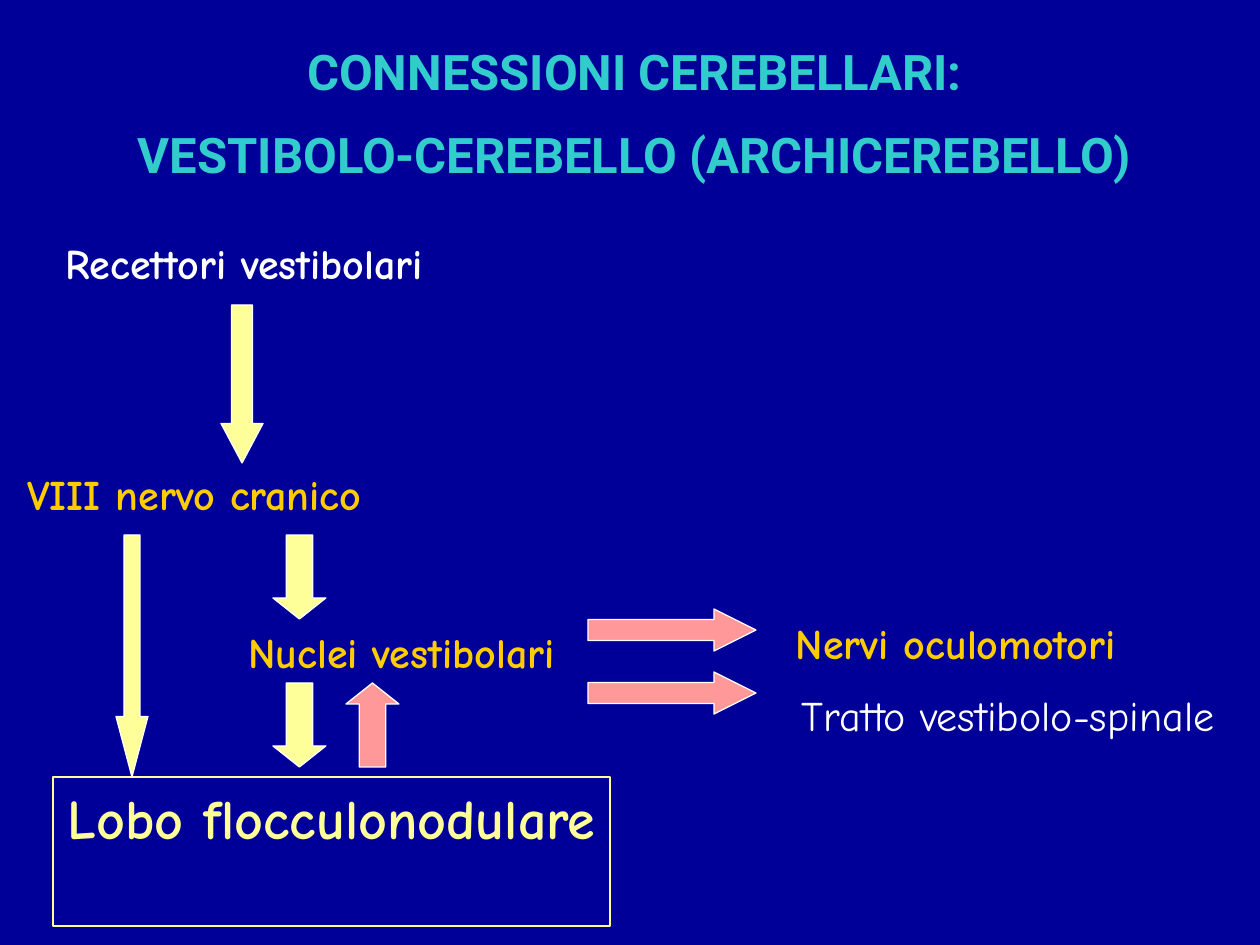
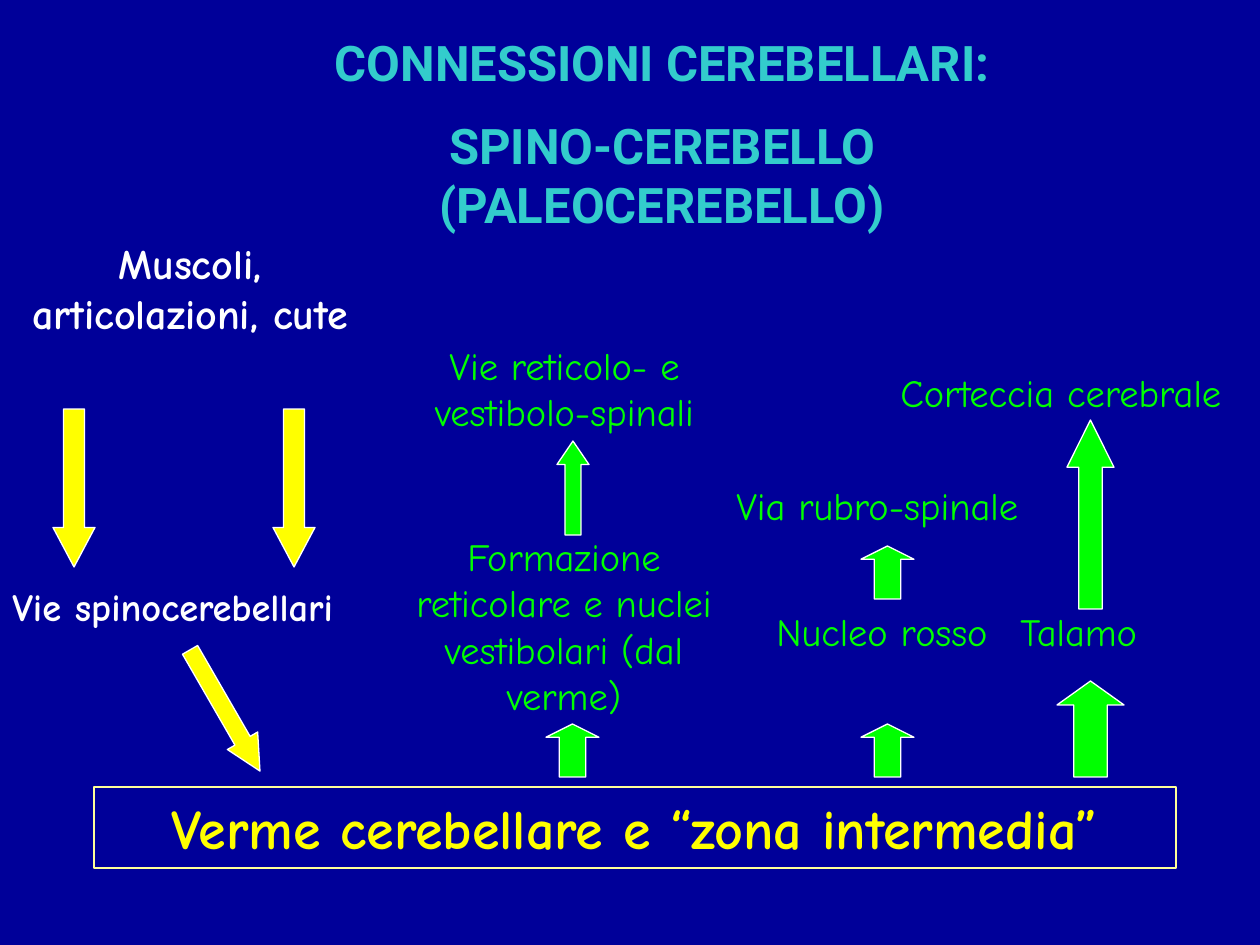
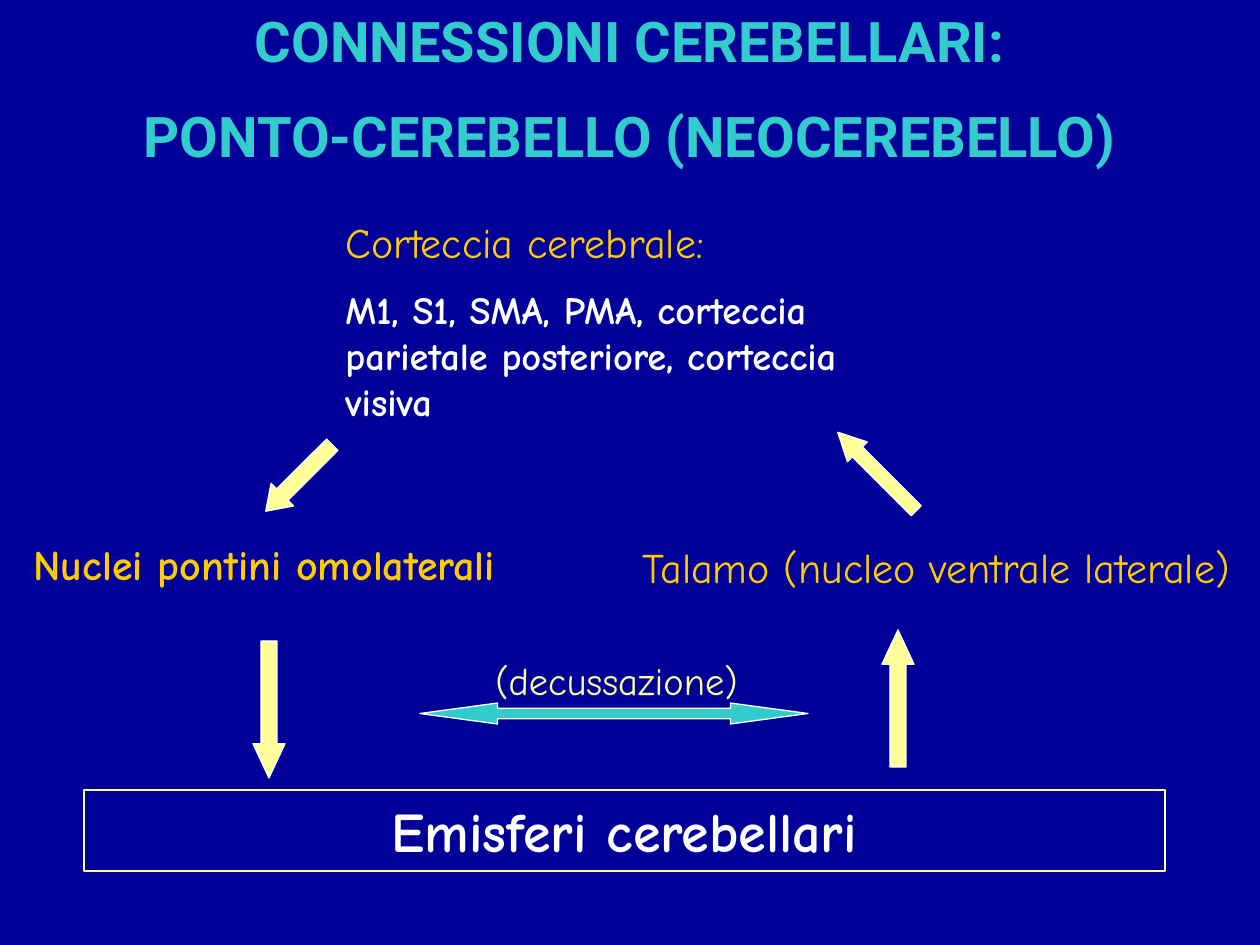
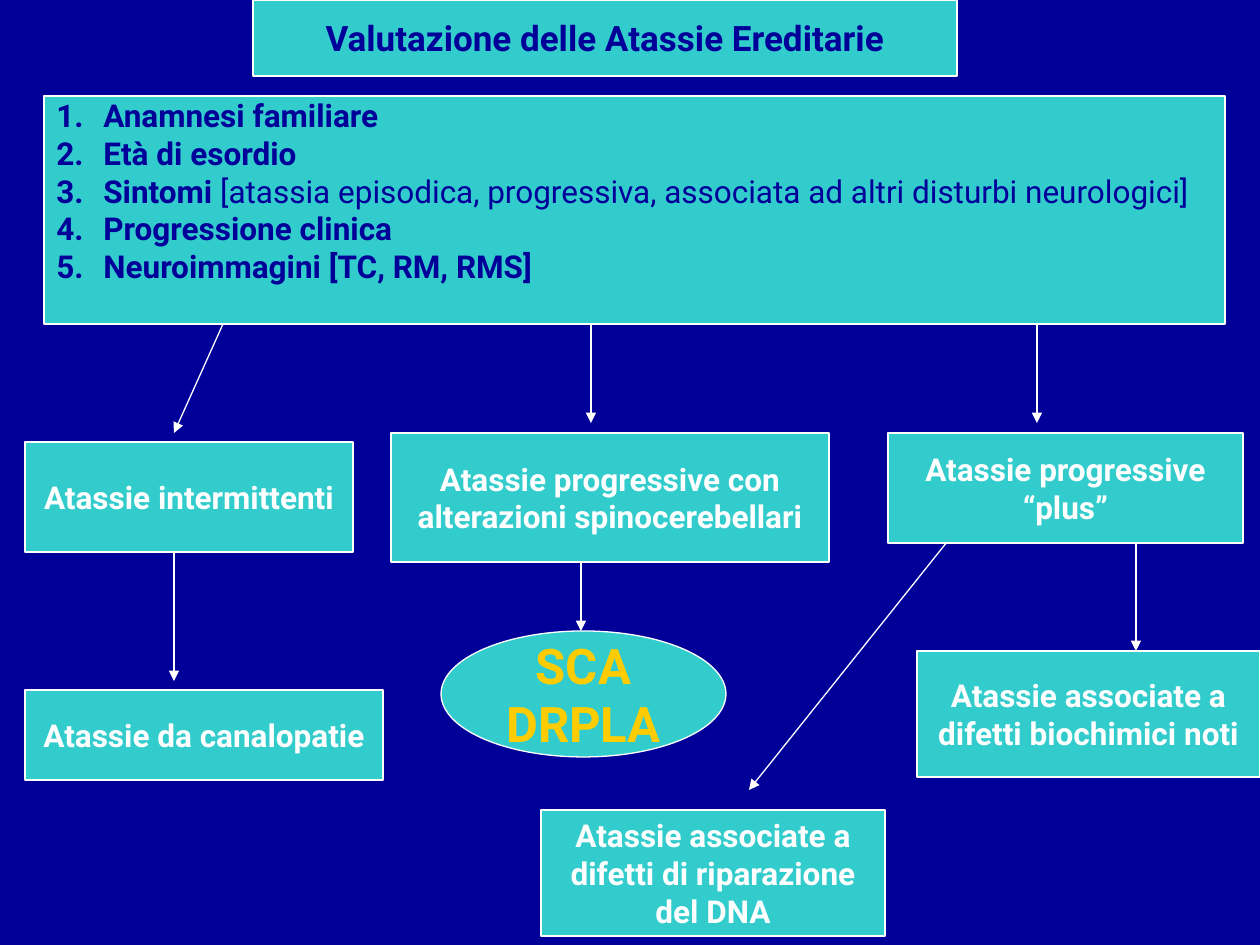
from lxml import etree
from pptx import Presentation
from pptx.dml.color import RGBColor
from pptx.enum.shapes import MSO_CONNECTOR, MSO_SHAPE
from pptx.enum.text import MSO_ANCHOR, PP_ALIGN
from pptx.oxml.ns import qn
from pptx.util import Emu, Pt

EMU_PER_PX = 914400 / 126
LEFT, CENTER, RIGHT = PP_ALIGN.LEFT, PP_ALIGN.CENTER, PP_ALIGN.RIGHT
TOP, MIDDLE = MSO_ANCHOR.TOP, MSO_ANCHOR.MIDDLE
RECT, OVAL = MSO_SHAPE.RECTANGLE, MSO_SHAPE.OVAL
STRAIGHT = MSO_CONNECTOR.STRAIGHT
UP, DOWN, ACROSS, BOTH = (MSO_SHAPE.UP_ARROW, MSO_SHAPE.DOWN_ARROW,
                          MSO_SHAPE.RIGHT_ARROW, MSO_SHAPE.LEFT_RIGHT_ARROW)
COLORS = {"navy": "000099", "teal": "33CCCC", "white": "FFFFFF", "cream": "FFFF99",
          "gold": "FFCC00", "yellow": "FFFF00", "green": "00FF00", "pink": "FF9999"}
HEAD_FONT, BODY_FONT = "Roboto", "Comic Neue"
TITLE = "CONNESSIONI CEREBELLARI:"

# Pathway slides
# title: box, size, second line
# labels: box, alignment, paragraphs of (text, size, colour, bold)
# target: framed label at the foot, as box, text, colour
# arrows: shape, box, colour, rotation
PATHWAYS = [
    {"title": ((34, 35, 1201, 160), 28, "VESTIBOLO-CEREBELLO (ARCHICEREBELLO)"),
     "labels": [
         ((53, 231, 903, 63), LEFT, [("Recettori vestibolari", 24, "white", True)]),
         ((113, 620, 454, 63), RIGHT, [("Nuclei vestibolari", 24, "gold", True)]),
         ((15, 462, 449, 63), LEFT, [("VIII nervo cranico", 24, "gold", True)]),
         ((756, 611, 399, 63), CENTER, [("Nervi oculomotori", 24, "gold", True)]),
         ((756, 683, 504, 63), CENTER, [("Tratto vestibolo-spinale", 24, "white", False)])],
     "target": ((53, 777, 557, 149), "Lobo flocculonodulare", "cream"),
     "arrows": [
         (ACROSS, (163, 363, 158, 42), "cream", 90),
         (DOWN, (116, 535, 32, 242), "cream", 0),
         (DOWN, (273, 535, 53, 84), "cream", 0),
         (DOWN, (273, 683, 53, 84), "cream", 0),
         (UP, (346, 683, 53, 84), "pink", 0),
         (UP, (651, 546, 42, 168), "pink", 90),
         (UP, (651, 609, 42, 168), "pink", 90)]},
    {"title": ((242, 26, 840, 219), 28, "SPINO-CEREBELLO (PALEOCEREBELLO)"),
     "labels": [
         ((0, 577, 388, 59), LEFT, [("Vie spinocerebellari", 22, "white", True)]),
         ((372, 527, 384, 198), CENTER,
          [("Formazione reticolare e nuclei vestibolari (dal verme)", 22, "green", False)]),
         ((888, 363, 388, 59), LEFT, [("Corteccia cerebrale", 22, "green", False)]),
         ((18, 231, 344, 164), CENTER, [("Muscoli, articolazioni, cute", 24, "white", True)]),
         ((756, 602, 252, 105), CENTER, [("Nucleo rosso", 22, "green", False)]),
         ((1008, 602, 158, 59), LEFT, [("Talamo", 22, "green", False)]),
         ((724, 476, 382, 59), LEFT, [("Via rubro-spinale", 22, "green", False)]),
         ((407, 336, 315, 105), CENTER,
          [("Vie reticolo- e vestibolo-spinali", 22, "green", False)])],
     "target": ((94, 787, 1082, 81), "Verme cerebellare e “zona intermedia”", "yellow"),
     "arrows": [
         (ACROSS, (-5, 467, 158, 42), "yellow", 90),
         (ACROSS, (215, 467, 158, 42), "yellow", 90),
         (ACROSS, (155, 693, 140, 35), "yellow", 60),
         (UP, (546, 724, 53, 53), "green", 0),
         (UP, (861, 724, 53, 53), "green", 0),
         (UP, (1057, 681, 67, 96), "green", 0),
         (UP, (861, 546, 53, 53), "green", 0),
         (UP, (1067, 420, 47, 189), "green", 0),
         (UP, (557, 441, 32, 94), "green", 0)]},
    {"title": ((0, 0, 1260, 180), 32, "PONTO-CEREBELLO (NEOCEREBELLO)"),
     "labels": [
         ((333, 210, 535, 224), LEFT,
          [("Corteccia cerebrale:", 24, "gold", False),
           ("M1, S1, SMA, PMA, corteccia parietale posteriore, corteccia visiva",
            22, "white", True)]),
         ((21, 532, 525, 113), LEFT, [("Nuclei pontini omolaterali", 24, "gold", True)]),
         ((483, 651, 325, 59), LEFT, [("(decussazione)", 22, "cream", False)]),
         ((630, 535, 630, 113), LEFT,
          [("Talamo (nucleo ventrale laterale)", 24, "gold", False)])],
     "target": ((84, 790, 1081, 81), "Emisferi cerebellari", "white"),
     "arrows": [
         (DOWN, (253, 641, 32, 137), "cream", 0),
         (DOWN, (283, 431, 32, 94), "cream", 45),
         (UP, (882, 630, 32, 137), "cream", 0),
         (UP, (863, 416, 28, 111), "cream", 315),
         (BOTH, (420, 703, 388, 21), "teal", 0)]},
]

# Flow chart slide: shape, box, lines, size, colour
NODES = [
    (RECT, (253, 0, 704, 76), ["Valutazione delle Atassie Ereditarie"], 20, "navy"),
    (RECT, (25, 442, 328, 110), ["Atassie intermittenti"], 18, "white"),
    (RECT, (25, 690, 358, 90), ["Atassie da canalopatie"], 18, "white"),
    (RECT, (391, 433, 438, 129),
     ["Atassie progressive con", "alterazioni spinocerebellari"], 18, "white"),
    (OVAL, (441, 631, 285, 126), ["SCA", "DRPLA"], 28, "gold"),
    (RECT, (888, 433, 355, 110), ["Atassie progressive", "“plus”"], 18, "white"),
    (RECT, (541, 810, 344, 126),
     ["Atassie associate a", "difetti di riparazione", "del DNA"], 18, "white"),
    (RECT, (917, 651, 343, 126),
     ["Atassie associate a", "difetti biochimici noti"], 18, "white"),
]
CRITERIA_BOX = (44, 96, 1181, 228)
CRITERIA = [("Anamnesi familiare", ""), ("Età di esordio", ""),
            ("Sintomi ",
             "[atassia episodica, progressiva, associata ad altri disturbi neurologici]"),
            ("Progressione clinica", ""), ("Neuroimmagini [TC, RM, RMS]", "")]
NUMBER_INDENT = 47
LINKS = [(223, 324, 174, 433), (174, 552, 174, 681), (591, 324, 591, 423),
         (581, 562, 581, 631), (1037, 324, 1037, 423), (947, 542, 749, 790),
         (1136, 542, 1136, 651)]


def px(n):
    return Emu(round(n * EMU_PER_PX))


def rgb(name):
    return RGBColor.from_string(COLORS[name])


def style_run(r, font, size, color, bold):
    r.font.name, r.font.size, r.font.bold = font, Pt(size), bold
    r.font.color.rgb = rgb(color)


def write(shape, paragraphs, font, align, gap=0.0, anchor=TOP):
    """Fill a shape; gap is the space between paragraphs, in text heights."""
    tf = shape.text_frame
    tf.word_wrap, tf.vertical_anchor = True, anchor
    tf.text = "\n".join(text for text, *_ in paragraphs)
    for i, (p, (_, size, color, bold)) in enumerate(zip(tf.paragraphs, paragraphs)):
        p.alignment = align
        if i and gap:
            p.space_before = Pt(size * gap)
        style_run(p.runs[0], font, size, color, bold)


def add_label(s, box, paragraphs, font, align):
    write(s.shapes.add_textbox(*map(px, box)), paragraphs, font, align, gap=0.5)


def add_figure(s, kind, box, fill=None, line="white"):
    sp = s.shapes.add_shape(kind, *map(px, box))
    sp.shadow.inherit = False
    if fill:
        sp.fill.solid()
        sp.fill.fore_color.rgb = rgb(fill)
    else:
        sp.fill.background()
    sp.line.color.rgb = rgb(line)
    sp.line.width = Pt(0.75)
    return sp


def add_arrow(s, kind, box, color, rotation):
    sp = add_figure(s, kind, box, color)
    sp.rotation = rotation
    # A head takes a quarter of the length, or a fifth when there are two
    length, breadth = max(box[2:]), min(box[2:])
    sp.adjustments[1] = length / breadth / (5 if kind == BOTH else 4)


def add_link(s, ends):
    c = s.shapes.add_connector(STRAIGHT, *map(px, ends))
    c.line.color.rgb = rgb("white")
    c.line.width = Pt(0.75)
    etree.SubElement(c.line._get_or_add_ln(), qn("a:tailEnd"), type="triangle")
    etree.SubElement(c._element.spPr, qn("a:effectLst"))


def add_criteria(s):
    tf = add_figure(s, RECT, CRITERIA_BOX, "teal").text_frame
    tf.word_wrap, tf.vertical_anchor, tf.margin_top = True, TOP, 0
    for i, (name, detail) in enumerate(CRITERIA):
        p = tf.add_paragraph() if i else tf.paragraphs[0]
        p.alignment = LEFT
        pPr = p._p.get_or_add_pPr()
        pPr.set("marL", str(px(NUMBER_INDENT)))
        pPr.set("indent", str(-px(NUMBER_INDENT)))
        etree.SubElement(pPr, qn("a:buFont"), typeface=HEAD_FONT)
        etree.SubElement(pPr, qn("a:buAutoNum"), type="arabicPeriod")
        for text, bold in ((name, True), (detail, False)):
            if text:
                r = p.add_run()
                r.text = text
                style_run(r, HEAD_FONT, 18, "navy", bold)


def add_pathway(s, pathway):
    box, size, subject = pathway["title"]
    add_label(s, box, [(text, size, "teal", True) for text in (TITLE, subject)],
              HEAD_FONT, CENTER)
    for box, align, paragraphs in pathway["labels"]:
        add_label(s, box, paragraphs, BODY_FONT, align)
    box, text, color = pathway["target"]
    write(add_figure(s, RECT, box, line="cream"), [(text, 32, color, True)],
          BODY_FONT, CENTER)
    for arrow in pathway["arrows"]:
        add_arrow(s, *arrow)


def add_flow_chart(s):
    add_criteria(s)
    for kind, box, lines, size, color in NODES:
        write(add_figure(s, kind, box, "teal"),
              [(text, size, color, True) for text in lines],
              HEAD_FONT, CENTER, anchor=MIDDLE)
    for ends in LINKS:
        add_link(s, ends)


def main():
    prs = Presentation()
    prs.slide_width, prs.slide_height = px(1260), px(945)
    background = prs.slide_master.background.fill
    background.solid()
    background.fore_color.rgb = rgb("navy")
    blank = prs.slide_layouts[6]
    for pathway in PATHWAYS:
        add_pathway(prs.slides.add_slide(blank), pathway)
    add_flow_chart(prs.slides.add_slide(blank))
    prs.save("out.pptx")


if __name__ == "__main__":
    main()
